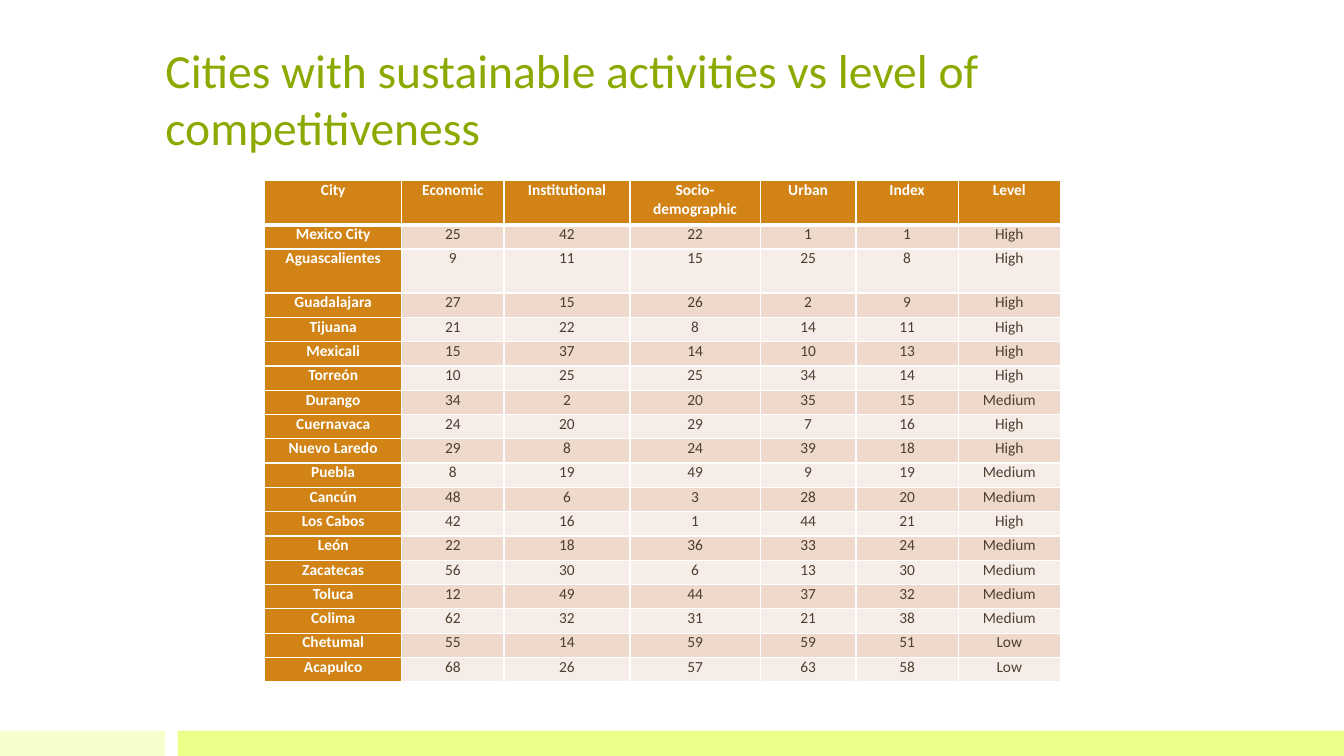
import pptx
import pptx.dml.color
import pptx.enum.shapes
import pptx.enum.text
import pptx.oxml
import pptx.oxml.ns
import pptx.util

Pt = pptx.util.Pt
RGB = pptx.dml.color.RGBColor
ALIGN = pptx.enum.text.PP_ALIGN

WHITE = RGB(0xFF, 0xFF, 0xFF)
GREEN = RGB(0x8B, 0xAA, 0x00)
PALE = RGB(0xF6, 0xFF, 0xCC)
LIME = RGB(0xE9, 0xFF, 0x88)
ORANGE = RGB(0xD1, 0x83, 0x16)
BROWN = RGB(0x4D, 0x3E, 0x2F)
BANDS = (RGB(0xF7, 0xED, 0xE8), RGB(0xEE, 0xD9, 0xCC))
FONT = "Calibri"

HEAD = ("City", "Economic", "Institutional", "Socio-demographic",
        "Urban", "Index", "Level")
CITIES = (
    ("Mexico City", 25, 42, 22, 1, 1, "High"),
    ("Aguascalientes", 9, 11, 15, 25, 8, "High"),
    ("Guadalajara", 27, 15, 26, 2, 9, "High"),
    ("Tijuana", 21, 22, 8, 14, 11, "High"),
    ("Mexicali", 15, 37, 14, 10, 13, "High"),
    ("Torreón", 10, 25, 25, 34, 14, "High"),
    ("Durango", 34, 2, 20, 35, 15, "Medium"),
    ("Cuernavaca", 24, 20, 29, 7, 16, "High"),
    ("Nuevo Laredo", 29, 8, 24, 39, 18, "High"),
    ("Puebla", 8, 19, 49, 9, 19, "Medium"),
    ("Cancún", 48, 6, 3, 28, 20, "Medium"),
    ("Los Cabos", 42, 16, 1, 44, 21, "High"),
    ("León", 22, 18, 36, 33, 24, "Medium"),
    ("Zacatecas", 56, 30, 6, 13, 30, "Medium"),
    ("Toluca", 12, 49, 44, 37, 32, "Medium"),
    ("Colima", 62, 32, 31, 21, 38, "Medium"),
    ("Chetumal", 55, 14, 59, 59, 51, "Low"),
    ("Acapulco", 68, 26, 57, 63, 58, "Low"),
)
WIDTHS = (98, 73, 90, 93, 68.5, 73, 73)
TALL, ROW = 31.5, 17.35
TALL_ROWS = (0, 2)


def style(para, size, color, bold, align):
    para.alignment = align
    for run in para.runs:
        font = run.font
        font.name, font.size, font.bold = FONT, Pt(size), bold
        font.color.rgb = color


def add_bar(slide, left, width, color):
    bar = slide.shapes.add_shape(
        pptx.enum.shapes.MSO_SHAPE.RECTANGLE,
        Pt(left), Pt(522), Pt(width), Pt(18))
    bar.shadow.inherit = False
    bar.fill.solid()
    bar.fill.fore_color.rgb = color
    bar.line.fill.background()


def set_title(slide, text):
    title = slide.shapes.title
    title.left, title.top = Pt(111), Pt(21.6)
    title.width, title.height = Pt(738), Pt(93)
    frame = title.text_frame
    frame.text = text
    frame.word_wrap = True
    frame.vertical_anchor = pptx.enum.text.MSO_ANCHOR.BOTTOM
    style(frame.paragraphs[0], 34, GREEN, False, ALIGN.LEFT)


def add_edges(cell, base):
    props = cell._tc.get_or_add_tcPr()
    for side, width in (("L", 1), ("R", 1), ("T", 1), ("B", base)):
        props.append(pptx.oxml.parse_xml(
            f'<a:ln{side} {pptx.oxml.ns.nsdecls("a")} w="{Pt(width)}">'
            f'<a:solidFill><a:srgbClr val="{WHITE}"/></a:solidFill>'
            f'</a:ln{side}>'))


def fill_cell(cell, value, row, col):
    label = row == 0 or col == 0
    cell.margin_left = cell.margin_right = Pt(5)
    cell.margin_top = cell.margin_bottom = 0
    add_edges(cell, 3 if row == 0 else 1)
    cell.fill.solid()
    cell.fill.fore_color.rgb = ORANGE if label else BANDS[row % 2]
    cell.text_frame.text = str(value)
    style(cell.text_frame.paragraphs[0], 11,
          WHITE if label else BROWN, label, ALIGN.CENTER)


def add_grid(slide, rows):
    highs = [TALL if r in TALL_ROWS else ROW for r in range(len(rows))]
    table = slide.shapes.add_table(
        len(rows), len(WIDTHS), Pt(189), Pt(129),
        Pt(sum(WIDTHS)), Pt(sum(highs))).table
    table.first_col = True
    for col, width in zip(table.columns, WIDTHS):
        col.width = Pt(width)
    for r, values in enumerate(rows):
        table.rows[r].height = Pt(highs[r])
        for c, value in enumerate(values):
            fill_cell(table.cell(r, c), value, r, c)


def main():
    deck = pptx.Presentation()
    deck.slide_width, deck.slide_height = Pt(960), Pt(540)
    slide = deck.slides.add_slide(deck.slide_layouts[5])

    # Bottom bars
    add_bar(slide, 0, 118, PALE)
    add_bar(slide, 127, 833, LIME)

    # Title and table
    set_title(slide, "Cities with sustainable activities vs level of "
                     "competitiveness")
    add_grid(slide, (HEAD,) + CITIES)

    deck.save("out.pptx")


if __name__ == "__main__":
    main()
